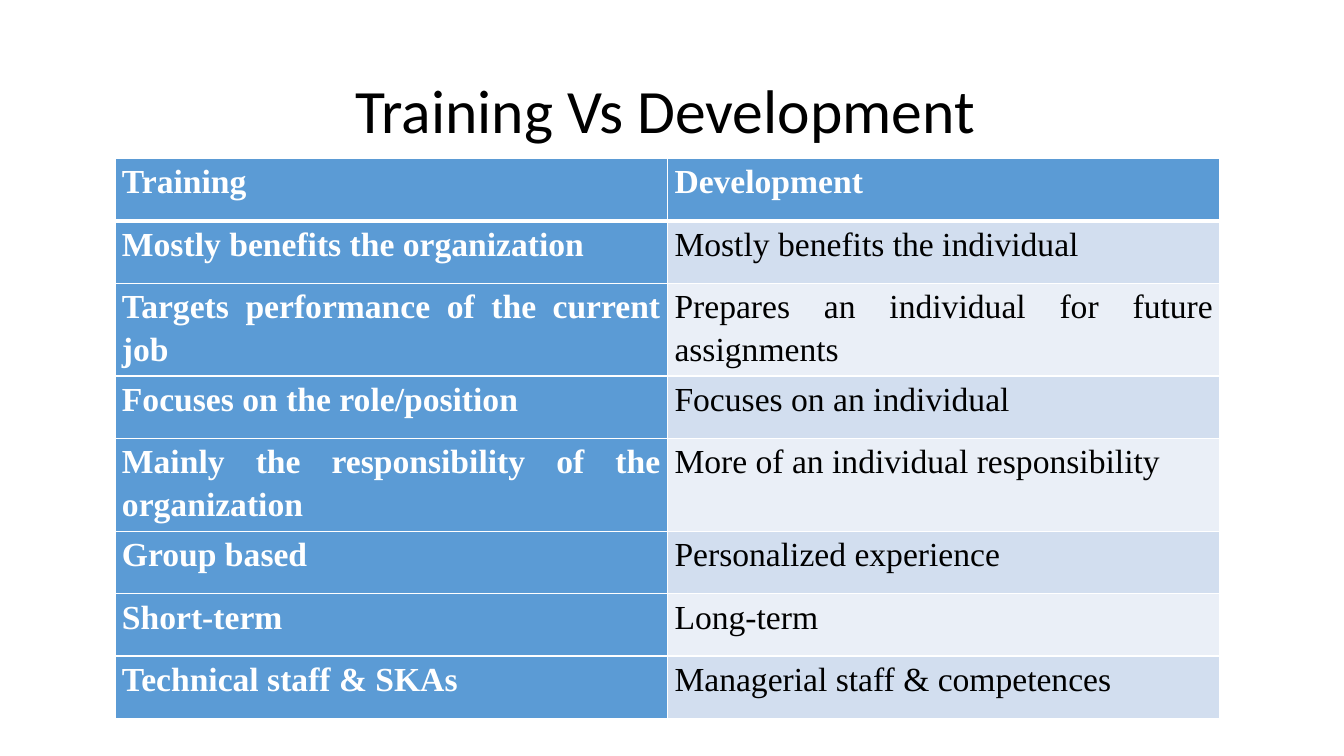
import pptx
import pptx.dml.color
import pptx.enum.text
import pptx.util
from lxml import etree
from pptx.oxml.ns import qn
from pptx.util import Inches

COLORS = {
    "white": "FFFFFF",
    "black": "000000",
    "blue": "5B9BD5",
    "band_dark": "D2DEEF",
    "band_light": "EAEFF7",
}
ROWS = [
    ("Training ", "Development "),
    ("Mostly benefits the organization ", "Mostly benefits the individual "),
    ("Targets performance of the current job ", "Prepares an individual for future assignments "),
    ("Focuses on the role/position ", "Focuses on an individual "),
    ("Mainly the responsibility of the organization ", "More of an individual responsibility "),
    ("Group based ", "Personalized experience "),
    ("Short-term ", "Long-term "),
    ("Technical staff & SKAs", "Managerial staff & competences "),
]


def format_paragraph(paragraph, font_name, size, color, bold, alignment, spacing):
    paragraph.alignment = alignment
    paragraph.line_spacing = spacing
    font = paragraph.runs[0].font
    font.name = font_name
    font.size = pptx.util.Pt(size)
    font.bold = bold
    font.color.rgb = pptx.dml.color.RGBColor.from_string(COLORS[color])


def add_border(cell, side, width):
    """Add a solid white border; side is L, R, T or B, and width is in points."""
    properties = cell._tc.get_or_add_tcPr()
    line = etree.SubElement(properties, qn(f"a:ln{side}"), w=str(pptx.util.Pt(width)))
    fill = etree.SubElement(line, qn("a:solidFill"))
    etree.SubElement(fill, qn("a:srgbClr"), val=COLORS["white"])


presentation = pptx.Presentation()
presentation.slide_width = Inches(13.33)
presentation.slide_height = Inches(7.5)
slide = presentation.slides.add_slide(presentation.slide_layouts[6])

title = slide.shapes.add_textbox(Inches(0.92), Inches(0.4), Inches(11.5), Inches(1.45))
title.text_frame.word_wrap = True
title.text_frame.vertical_anchor = pptx.enum.text.MSO_ANCHOR.MIDDLE
title.text_frame.text = "Training Vs Development "
format_paragraph(title.text_frame.paragraphs[0], "Calibri", 44, "black", False,
                 pptx.enum.text.PP_ALIGN.CENTER, 0.9)

row_height = 0.62
table = slide.shapes.add_table(
    len(ROWS), 2, Inches(1.14), Inches(1.57), Inches(10.96), Inches(row_height * len(ROWS))
).table

for row_index, texts in enumerate(ROWS):
    table.rows[row_index].height = Inches(row_height)
    for column_index, text in enumerate(texts):
        cell = table.cell(row_index, column_index)
        cell.margin_left = cell.margin_right = Inches(0.07)
        cell.margin_top = cell.margin_bottom = 0
        cell.text_frame.text = text

        is_heading = row_index == 0 or column_index == 0
        format_paragraph(cell.text_frame.paragraphs[0], "Times New Roman", 24,
                         "white" if is_heading else "black", is_heading,
                         pptx.enum.text.PP_ALIGN.JUSTIFY, 1.15)

        for side in "LRTB":
            under_header = (row_index, side) in [(0, "B"), (1, "T")]
            add_border(cell, side, 3 if under_header else 1)

        band = "band_dark" if row_index % 2 else "band_light"
        cell.fill.solid()
        cell.fill.fore_color.rgb = pptx.dml.color.RGBColor.from_string(
            COLORS["blue" if is_heading else band])

presentation.save("out.pptx")
